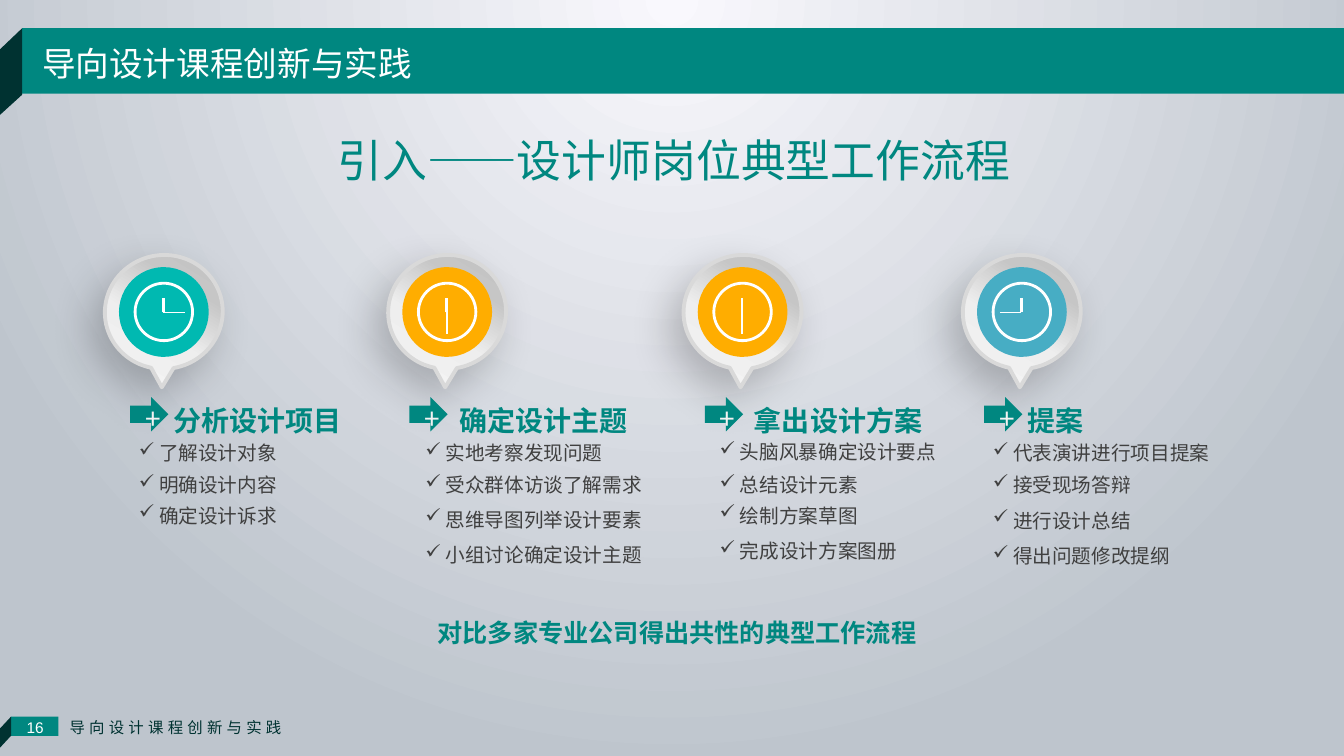
from copy import deepcopy
from lxml import etree
from pptx import Presentation
from pptx.dml.color import RGBColor
from pptx.enum.shapes import MSO_CONNECTOR, MSO_SHAPE
from pptx.enum.text import MSO_AUTO_SIZE, PP_ALIGN
from pptx.oxml.ns import qn
from pptx.util import Inches, Pt

TEAL, DARK, WHITE, GREY = "008780", "003231", "FFFFFF", "404040"
CJK = "Noto Sans CJK SC"
rgb = RGBColor.from_string

prs = Presentation()
prs.slide_width, prs.slide_height = Inches(13.33), Inches(7.5)
s = prs.slides.add_slide(prs.slide_layouts[6])


def add_shape(kind, x, y, w, h, fill=None, line=None, line_width=2):
    sp = s.shapes.add_shape(kind, Inches(x), Inches(y), Inches(w), Inches(h))
    sp.shadow.inherit = False
    if fill:
        sp.fill.solid()
        sp.fill.fore_color.rgb = rgb(fill)
    else:
        sp.fill.background()
    if line:
        sp.line.color.rgb = rgb(line)
        sp.line.width = Pt(line_width)
    else:
        sp.line.fill.background()
    return sp


def add_text(lines, x, y, w, h, size, color, font=CJK, bold=False,
             spacing=None, bullet=None, wrap=True):
    tf = s.shapes.add_textbox(Inches(x), Inches(y), Inches(w), Inches(h)).text_frame
    tf.word_wrap = wrap
    tf.auto_size = MSO_AUTO_SIZE.SHAPE_TO_FIT_TEXT
    tf.text = "\n".join(lines)
    for p in tf.paragraphs:
        p.font.name, p.font.size, p.font.bold = font, Pt(size), bold
        p.font.color.rgb = rgb(color)
        if spacing:
            p.line_spacing = spacing
        if bullet:
            pPr = p._p.get_or_add_pPr()
            pPr.set("marL", str(Inches(0.2)))
            pPr.set("indent", str(-Inches(0.2)))
            mark = etree.Element(qn("a:buChar"), char=bullet)
            pPr.find(qn("a:defRPr")).addprevious(mark)
    return tf


# Background: light glow from above the slide
fill = s.background.fill
fill.gradient()
for stop, position, color in zip(fill.gradient_stops, (0, 1), ("F9F8FD", "BEC5CD")):
    stop.position = position
    stop.color.rgb = rgb(color)
grad = s._element.find(".//" + qn("a:gradFill"))
grad.remove(grad.find(qn("a:lin")))
glow = etree.SubElement(grad, qn("a:path"))
glow.set("path", "circle")
etree.SubElement(glow, qn("a:fillToRect"), l="50000", t="-80000", r="50000", b="180000")

# Header and footer ribbons
add_shape(MSO_SHAPE.RECTANGLE, 0.22, 0.28, 13.11, 0.65, TEAL)
add_shape(MSO_SHAPE.RECTANGLE, 0.11, 7.11, 0.47, 0.19, TEAL)
folds = [
    [(0.11, 7.11), (-0.02, 7.25), (-0.02, 7.44), (0.11, 7.3)],
    [(0, 0.49), (0, 1.14), (0.22, 0.94), (0.22, 0.28)],
]
for fold in folds:
    start, *rest = [(Inches(x), Inches(y)) for x, y in fold]
    builder = s.shapes.build_freeform(*start)
    builder.add_line_segments(rest, close=True)
    sp = builder.convert_to_shape()
    sp.shadow.inherit = False
    sp.fill.solid()
    sp.fill.fore_color.rgb = rgb(DARK)
    sp.line.fill.background()

number = add_text(["16"], 0.12, 7.05, 0.46, 0.32, 11, WHITE, "Arial", wrap=False)
number.paragraphs[0].alignment = PP_ALIGN.CENTER
footer = add_text(["导向设计课程创新与实践"], 0.56, 7.05, 2.4, 0.32, 11, DARK, wrap=False)
footer.paragraphs[0]._p.pPr.find(qn("a:defRPr")).set("spc", "300")
for tf in (number, footer):
    tf.margin_left = tf.margin_right = Inches(0.13)
    tf.margin_top = tf.margin_bottom = Inches(0.07)

add_text(["导向设计课程创新与实践"], 0.32, 0.38, 3.87, 0.5, 24, WHITE, wrap=False)
add_text(["引入——设计师岗位典型工作流程"], 3.25, 1.27, 7.44, 0.64, 32, TEAL, "Arial")

# Per step: pin x, arrow x, list x, pin colour, minute hand (dx, dy), heading,
# and blocks of list items with their tops
steps = [
    (1.04, 1.29, 1.28, "00B9B1", (0.21, 0), "分析设计项目",
     [(4.21, ["了解设计对象"]), (4.53, ["明确设计内容"]), (4.83, ["确定设计诉求"])]),
    (3.85, 4.06, 4.12, "FFAD00", (0, 0.21), "确定设计主题",
     [(4.21, ["实地考察发现问题"]), (4.53, ["受众群体访谈了解需求"]),
      (4.87, ["思维导图列举设计要素", "小组讨论确定设计主题"])]),
    (6.78, 6.99, 7.04, "FFAD00", (0, 0.21), "拿出设计方案",
     [(4.2, ["头脑风暴确定设计要点"]), (4.53, ["总结设计元素"]),
      (4.83, ["绘制方案草图", "完成设计方案图册"])]),
    (9.55, 9.76, 9.75, "47ADC4", (-0.21, 0), "提案",
     [(4.21, ["代表演讲进行项目提案"]),
      (4.53, ["接受现场答辩", "进行设计总结", "得出问题修改提纲"])]),
]
pin_stops = [(0, "BFBFBF"), (0.3, "C6C6C6"), (0.61, "EEEEEE"), (1, "F5F5F5")]

for pin_x, arrow_x, list_x, color, (dx, dy), heading, blocks in steps:
    pin = add_shape(MSO_SHAPE.OVAL_CALLOUT, pin_x, 2.53, 1.17, 1.13,
                    line="D9D9D9", line_width=2.75)
    pin.rotation = 351.6
    pin.adjustments[0], pin.adjustments[1] = -0.11, 0.652
    pin.fill.gradient()
    pin.fill.gradient_angle = 230
    gs_list = pin._element.spPr.find(".//" + qn("a:gsLst"))
    for gs in list(gs_list):
        gs_list.append(deepcopy(gs))
    for stop, (position, stop_color) in zip(pin.fill.gradient_stops, pin_stops):
        stop.position = position
        stop.color.rgb = rgb(stop_color)
    shadow = etree.SubElement(
        pin._element.spPr.find(qn("a:effectLst")), qn("a:outerShdw"),
        blurRad=str(Pt(30)), dist=str(Pt(14)), dir=str(130 * 60000),
        algn="ctr", rotWithShape="0")
    black = etree.SubElement(shadow, qn("a:srgbClr"), val="000000")
    etree.SubElement(black, qn("a:alpha"), val="22000")

    add_shape(MSO_SHAPE.OVAL, pin_x + 0.14, 2.65, 0.89, 0.89, color)
    add_shape(MSO_SHAPE.OVAL, pin_x + 0.3, 2.81, 0.57, 0.57, line=WHITE)
    cx, cy = pin_x + 0.58, 3.1
    for end_x, end_y, width in ((cx, 2.96, 2), (cx + dx, cy + dy, 1.25)):
        hand = s.shapes.add_connector(MSO_CONNECTOR.STRAIGHT, Inches(cx), Inches(cy),
                                      Inches(end_x), Inches(end_y))
        hand.line.color.rgb = rgb(WHITE)
        hand.line.width = Pt(width)
        etree.SubElement(hand._element.spPr, qn("a:effectLst"))

    for top, items in blocks:
        add_text(items, list_x, top, 2.6, 0.1 + 0.35 * len(items), 14, GREY,
                 spacing=1.5, bullet="✓")
    add_text([heading], list_x + 0.34, 3.79, 2, 0.6, 20, TEAL, bold=True, spacing=1.5)
    add_shape(MSO_SHAPE.RIGHT_ARROW, arrow_x, 3.94, 0.38, 0.34, TEAL)
    add_text(["+"], arrow_x + 0.05, 3.77, 0.65, 0.56, 20, "F2F2F2", spacing=1.5)

add_text(["对比多家专业公司得出共性的典型工作流程"], 4.24, 6.08, 5.93, 0.4, 18, TEAL,
         "Arial", bold=True)

prs.save("out.pptx")
